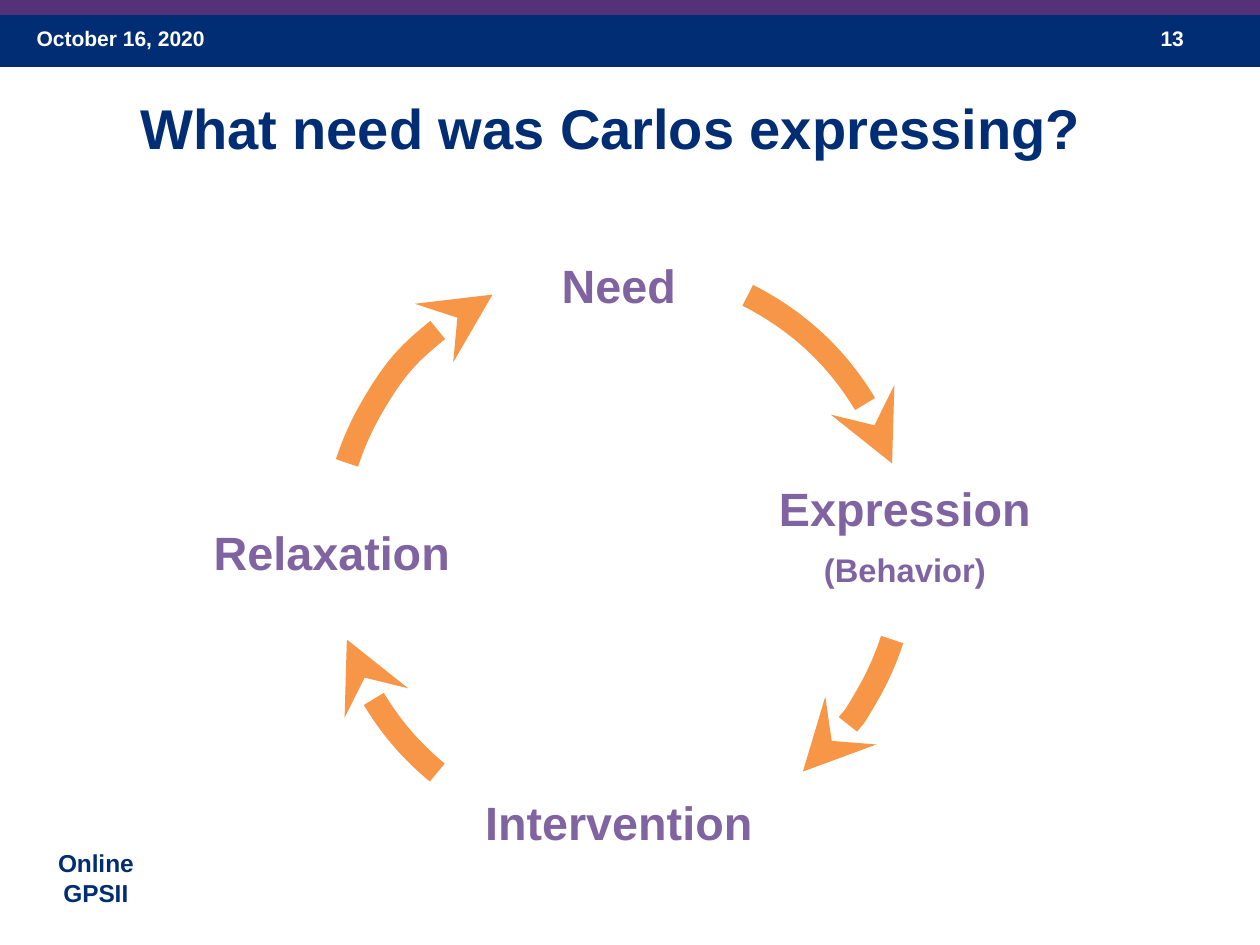
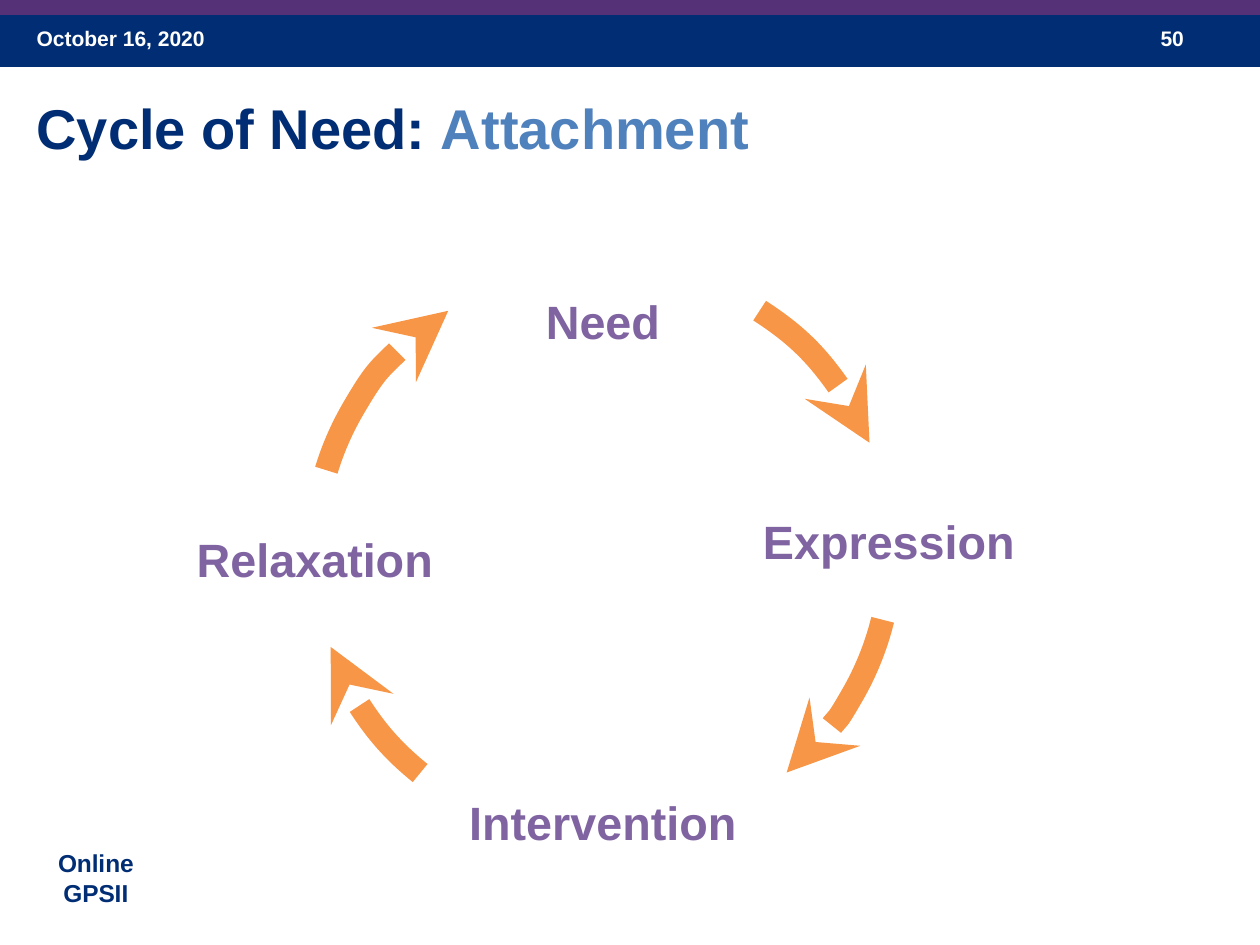
from lxml.etree import SubElement
from pptx import Presentation
from pptx.dml.color import RGBColor
from pptx.enum.shapes import MSO_SHAPE
from pptx.enum.text import MSO_ANCHOR, PP_ALIGN
from pptx.oxml.ns import qn
from pptx.util import Emu, Pt

NAVY = RGBColor(0x00, 0x2D, 0x73)
PURPLE = RGBColor(0x55, 0x32, 0x78)
LILAC = RGBColor(0x80, 0x64, 0xA2)
BLUE = RGBColor(0x4F, 0x81, 0xBD)
ORANGE = RGBColor(0xF7, 0x96, 0x46)
WHITE = RGBColor(0xFF, 0xFF, 0xFF)
FONT = "Arial"
WIDTH, HEIGHT = 1260, 945
CIRCLE = 573
LABEL_W, LABEL_H = 306, 156


def px(n):
    """Turn pixels, 168 to the inch, into EMU."""
    return Emu(round(n * 914400 / 168))


def add_band(s, top, height, color):
    """Add a plain full-width band."""
    sp = s.shapes.add_shape(MSO_SHAPE.RECTANGLE, 0, px(top), px(WIDTH), px(height))
    sp.shadow.inherit = False
    sp.fill.solid()
    sp.fill.fore_color.rgb = color
    sp.line.fill.background()


def add_text(s, box, paragraphs, align=PP_ALIGN.LEFT, anchor=MSO_ANCHOR.TOP, gap=0):
    """Add bold text; each paragraph is a list of (text, size, color) runs."""
    tf = s.shapes.add_textbox(*map(px, box)).text_frame
    tf.word_wrap = True
    tf.vertical_anchor = anchor
    for i, runs in enumerate(paragraphs):
        p = tf.add_paragraph() if i else tf.paragraphs[0]
        p.alignment = align
        if i:
            p.space_before = Pt(gap)
        for text, size, color in runs:
            r = p.add_run()
            r.text = text
            r.font.name = FONT
            r.font.size = Pt(size)
            r.font.bold = True
            r.font.color.rgb = color


def add_frame(prs, number):
    """Add a slide with the shared bands, date, number and footer."""
    s = prs.slides.add_slide(prs.slide_layouts[6])
    add_band(s, 12, 55, NAVY)
    add_band(s, 0, 15, PURPLE)
    add_text(s, (20, 17, 294, 50), [[("October 16, 2020", 9, WHITE)]])
    add_text(s, (1144, 17, 94, 50), [[(number, 9, WHITE)]])
    add_text(s, (37, 840, 118, 67),
             [[("Online", 10.5, NAVY)], [("GPSII", 10.5, NAVY)]], PP_ALIGN.CENTER)
    return s


def add_title(s, runs, align):
    """Add the slide title."""
    add_text(s, (20, 85, 1196, 118), [[(text, 24, color) for text, color in runs]], align)


def add_label(s, x, y, name, note=None):
    """Add a cycle step, centred on a point, with an optional smaller note."""
    paragraphs = [[(name, 20, LILAC)]]
    if note:
        paragraphs.append([(note, 14, LILAC)])
    add_text(s, (x - LABEL_W // 2, y - LABEL_H // 2, LABEL_W, LABEL_H),
             paragraphs, PP_ALIGN.CENTER, MSO_ANCHOR.MIDDLE, 6)


def add_arc_arrow(s, left, top, start, end):
    """Add a clockwise arrow along the circle, between two angles in degrees."""
    sp = s.shapes.add_shape(MSO_SHAPE.ARC, px(left), px(top), px(CIRCLE), px(CIRCLE))
    sp.shadow.inherit = False
    for i, angle in enumerate((start, end)):
        sp.adjustments[i] = angle * 60000 / 100000
    sp.fill.background()
    sp.line.color.rgb = ORANGE
    sp.line.width = Pt(10)
    SubElement(sp.line._get_or_add_ln(), qn("a:tailEnd"), type="stealth")


def add_cycle(s, labels, arrows):
    """Add the steps of the cycle and the arrows between them."""
    for label in labels:
        add_label(s, *label)
    for arrow in arrows:
        add_arc_arrow(s, *arrow)


def main():
    """Build both slides and save them."""
    prs = Presentation()
    prs.slide_width, prs.slide_height = px(WIDTH), px(HEIGHT)

    s = add_frame(prs, "13")
    add_title(s, [("What need was Carlos expressing? ", NAVY)], PP_ALIGN.CENTER)
    add_cycle(s,
              [(619, 285, "Need"), (905, 534, "Expression", "(Behavior)"),
               (619, 822, "Intervention"), (332, 552, "Relaxation")],
              [(333, 265, 296.6, 342.1), (333, 265, 17.9, 50.2),
               (333, 265, 129.5, 162.1), (333, 265, 198, 243.7)])

    s = add_frame(prs, "50")
    add_title(s, [("Cycle of Need: ", NAVY), ("Attachment", BLUE)], PP_ALIGN.LEFT)
    add_cycle(s,
              [(603, 321, "Need"), (889, 541, "Expression"),
               (603, 822, "Intervention"), (315, 559, "Relaxation")],
              [(318, 265, 302.8, 337.7), (318, 265, 13.8, 50.5),
               (314, 264, 129, 160.3), (314, 267, 196.9, 237.9)])

    prs.save("out.pptx")


if __name__ == "__main__":
    main()
